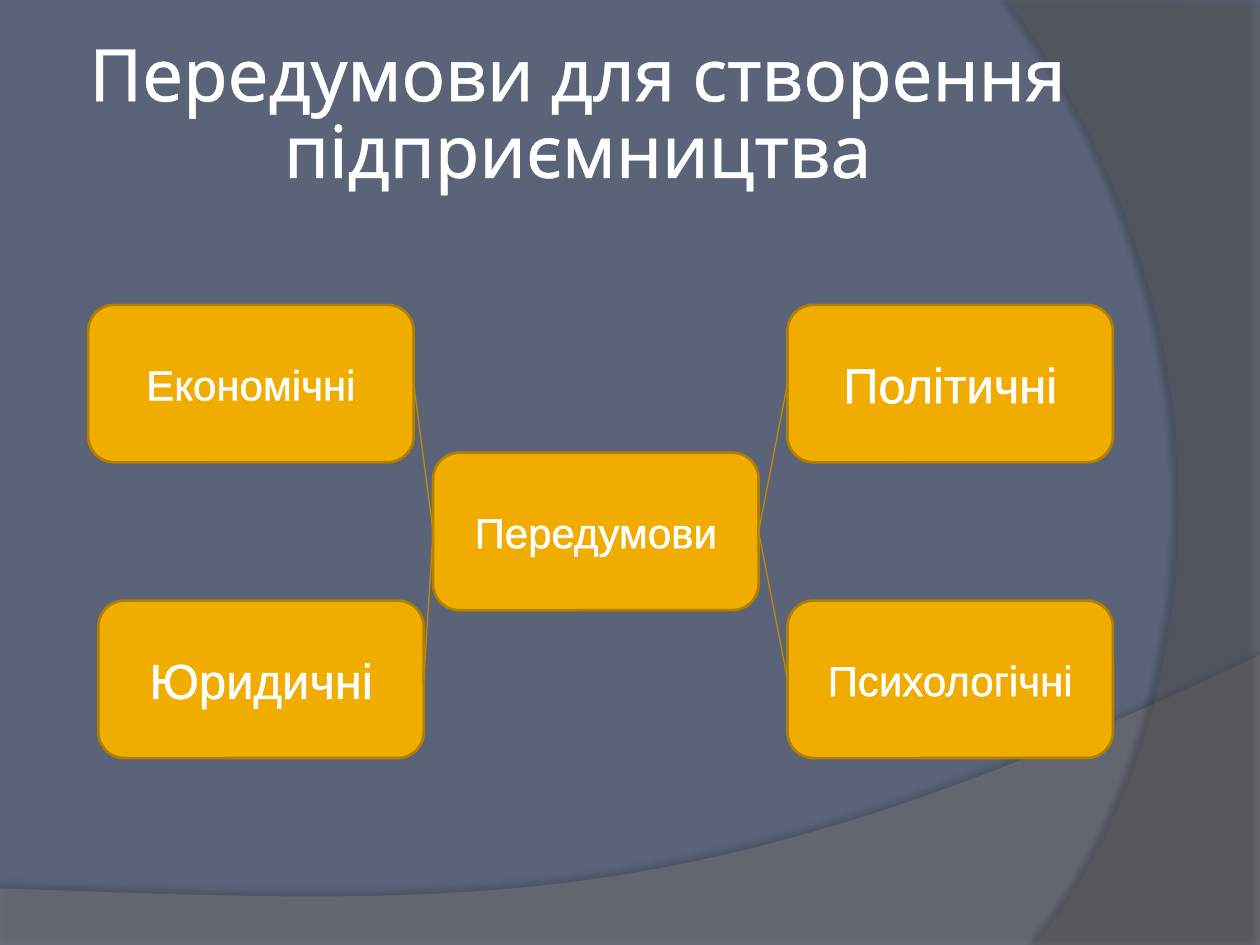
from dataclasses import dataclass

from lxml.etree import SubElement
from pptx import Presentation
from pptx.dml.color import RGBColor
from pptx.enum.shapes import MSO_CONNECTOR, MSO_SHAPE
from pptx.enum.text import MSO_ANCHOR, PP_ALIGN
from pptx.oxml import parse_xml
from pptx.oxml.ns import qn
from pptx.util import Pt

DRAWING_NS = 'xmlns:a="http://schemas.openxmlformats.org/drawingml/2006/main"'
LEFT, RIGHT = 1, 3  # connection sites of a rectangle


@dataclass(frozen=True)
class Theme:
    background: str = "5A6378"
    band: str = "7F7F7F"
    arc: str = "5E5E5E"
    box: str = "F0AD00"
    box_line: str = "B28000"
    link: str = "C08B00"
    text: str = "FFFFFF"
    title_font: str = "Karla"
    body_font: str = "Arial"
    title_size: float = 41.4
    large_size: float = 28
    body_size: float = 24
    text_outline: float = 1.45


def curve(start, control_1, control_2, end, steps=48):
    """Points along a cubic curve, without its start."""
    points = []
    for step in range(1, steps + 1):
        t = step / steps
        weights = ((1 - t) ** 3, 3 * t * (1 - t) ** 2, 3 * t**2 * (1 - t), t**3)
        corners = (start, control_1, control_2, end)
        points.append(tuple(sum(w * c[axis] for w, c in zip(weights, corners))
                            for axis in (0, 1)))
    return points


class SlideBuilder:
    def __init__(self, slide, theme):
        self.slide = slide
        self.theme = theme
        fill = slide.background.fill
        fill.solid()
        fill.fore_color.rgb = RGBColor.from_string(theme.background)

    def wave(self, points, color, opacity, shadow_opacity, distance, direction):
        """Translucent outline with a soft black shadow."""
        corners = [(Pt(x), Pt(y)) for x, y in points]
        builder = self.slide.shapes.build_freeform(*corners[0], scale=1.0)
        builder.add_line_segments(corners[1:], close=True)
        shape = builder.convert_to_shape()
        shape.line.fill.background()
        shape.fill.solid()
        shape.fill.fore_color.rgb = RGBColor.from_string(color)
        properties = shape._element.spPr
        color_element = properties.find(qn("a:solidFill"))[0]
        SubElement(color_element, qn("a:alpha"), val=str(opacity * 1000))
        properties.append(parse_xml(
            f'<a:effectLst {DRAWING_NS}><a:outerShdw blurRad="{Pt(4)}" '
            f'dist="{Pt(distance)}" dir="{direction * 60000}" rotWithShape="0">'
            f'<a:srgbClr val="000000"><a:alpha val="{shadow_opacity * 1000}"/>'
            f'</a:srgbClr></a:outerShdw></a:effectLst>'))

    def add_text(self, shape, text, font_name, size):
        """Centred text with a thin outline in its own colour."""
        frame = shape.text_frame
        frame.word_wrap = True
        frame.vertical_anchor = MSO_ANCHOR.MIDDLE
        paragraph = frame.paragraphs[0]
        paragraph.alignment = PP_ALIGN.CENTER
        run = paragraph.add_run()
        run.text = text
        run.font.name = font_name
        run.font.size = Pt(size)
        run.font.color.rgb = RGBColor.from_string(self.theme.text)
        run._r.get_or_add_rPr().insert(0, parse_xml(
            f'<a:ln {DRAWING_NS} w="{Pt(self.theme.text_outline)}"><a:solidFill>'
            f'<a:srgbClr val="{self.theme.text}"/></a:solidFill></a:ln>'))
        return paragraph

    def title(self, text, left, top, width, height):
        shape = self.slide.shapes.add_textbox(Pt(left), Pt(top), Pt(width), Pt(height))
        frame = shape.text_frame
        frame.margin_left = frame.margin_right = Pt(3.6)
        frame.margin_top = frame.margin_bottom = Pt(3.6)
        paragraph = self.add_text(shape, text, self.theme.title_font, self.theme.title_size)
        paragraph.line_spacing = 0.88

    def box(self, text, left, top, size):
        shape = self.slide.shapes.add_shape(
            MSO_SHAPE.ROUNDED_RECTANGLE, Pt(left), Pt(top), Pt(186), Pt(90))
        shape.shadow.inherit = False
        shape.fill.solid()
        shape.fill.fore_color.rgb = RGBColor.from_string(self.theme.box)
        shape.line.color.rgb = RGBColor.from_string(self.theme.box_line)
        shape.line.width = Pt(1.5)
        self.add_text(shape, text, self.theme.body_font, size)
        return shape

    def link(self, start, start_site, end, end_site):
        connector = self.slide.shapes.add_connector(
            MSO_CONNECTOR.STRAIGHT, Pt(0), Pt(0), Pt(0), Pt(0))
        connector.begin_connect(start, start_site)
        connector.end_connect(end, end_site)
        connector.line.color.rgb = RGBColor.from_string(self.theme.link)
        connector.line.width = Pt(0.75)
        SubElement(connector._element.spPr, qn("a:effectLst"))


def main():
    presentation = Presentation()
    presentation.slide_width, presentation.slide_height = Pt(720), Pt(540)
    slide = presentation.slides.add_slide(presentation.slide_layouts[6])
    theme = Theme()
    builder = SlideBuilder(slide, theme)

    # Background waves
    band_curve = curve((720, 374.4), (402.5, 525), (281.5, 517.7), (0, 507.6))
    builder.wave([(0, 507.6), (0, 540.7), (720, 540.7), (720, 374.4)] + band_curve[:-1],
                 theme.band, 45, 35, 3.5, 270)
    arc_curve = curve((591.1, 540), (673.2, 445.7), (733, 216), (576, 0))
    builder.wave([(720, 1.4), (720, 540), (591.1, 540)] + arc_curve,
                 theme.arc, 40, 45, 4, 180)

    # Title
    builder.title("Передумови для створення підприємництва", 36, 21.6, 588.2, 90)

    # Centre box and the four around it
    top_row, row_step, right_column = 174.2, 84.5, 450
    bottom_row = top_row + 2 * row_step
    center = builder.box("Передумови", 247.5, top_row + row_step, theme.body_size)
    economic = builder.box("Економічні", 50.4, top_row, theme.body_size)
    legal = builder.box("Юридичні", 56.2, bottom_row, theme.large_size)
    political = builder.box("Політичні", right_column, top_row, theme.large_size)
    psychological = builder.box("Психологічні", right_column, bottom_row, theme.body_size)

    # Links
    builder.link(economic, RIGHT, center, LEFT)
    builder.link(center, LEFT, legal, RIGHT)
    for box in (political, psychological):
        builder.link(center, RIGHT, box, LEFT)

    presentation.save("out.pptx")


if __name__ == "__main__":
    main()
